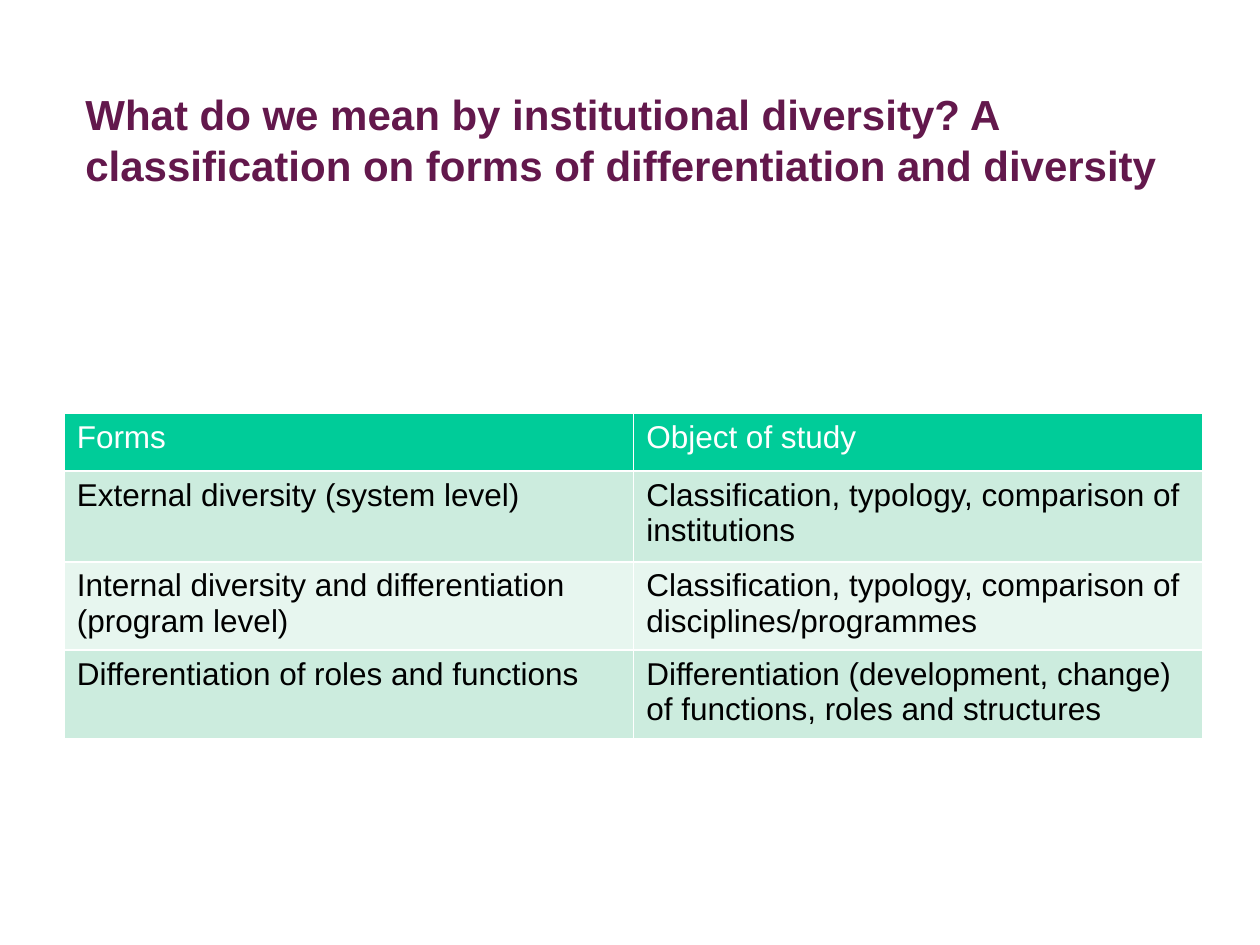
from typing import NamedTuple, Optional

import pptx
import pptx.dml.color
import pptx.enum.text
import pptx.util

Inches = pptx.util.Inches
RGBColor = pptx.dml.color.RGBColor

PLUM = RGBColor(0x63, 0x18, 0x4C)
GREEN = RGBColor(0x00, 0xCC, 0x99)
MINT = RGBColor(0xCC, 0xEC, 0xDE)
PALE_MINT = RGBColor(0xE7, 0xF6, 0xEF)
WHITE = RGBColor(0xFF, 0xFF, 0xFF)
BLACK = RGBColor(0x00, 0x00, 0x00)


class DiversityRow(NamedTuple):
    form: str
    study_object: str
    height: float


HEADING = DiversityRow("Forms", "Object of study", 0.46)
DIVERSITY_FORMS = [
    DiversityRow("External diversity (system level)",
                 "Classification, typology, comparison of institutions", 0.72),
    DiversityRow("Internal diversity and differentiation (program level)",
                 "Classification, typology, comparison of disciplines/programmes", 0.7),
    DiversityRow("Differentiation of roles and functions",
                 "Differentiation (development, change) of functions, roles and structures", 0.7),
]


def write_text(frame, text: str, *, size: float, color: RGBColor,
               bold: Optional[bool] = None) -> None:
    frame.word_wrap = True
    run = frame.paragraphs[0].add_run()
    run.text = text
    run.font.name = "Arial"
    run.font.size = pptx.util.Pt(size)
    run.font.color.rgb = color
    run.font.bold = bold


def add_title(slide, text: str) -> None:
    title = slide.shapes.add_textbox(Inches(0.58), Inches(0.6), Inches(9), Inches(1.01))
    title.text_frame.vertical_anchor = pptx.enum.text.MSO_ANCHOR.MIDDLE
    write_text(title.text_frame, text, size=24, color=PLUM, bold=True)


def fill_row(table, index: int, entry: DiversityRow, fill: RGBColor, color: RGBColor) -> None:
    table.rows[index].height = Inches(entry.height)
    for cell, text in zip(table.rows[index].cells, (entry.form, entry.study_object)):
        cell.fill.solid()
        cell.fill.fore_color.rgb = fill
        write_text(cell.text_frame, text, size=18, color=color)


def add_diversity_table(slide) -> None:
    height = sum(entry.height for entry in [HEADING, *DIVERSITY_FORMS])
    table = slide.shapes.add_table(len(DIVERSITY_FORMS) + 1, 2, Inches(0.51), Inches(3.28),
                                   Inches(9.04), Inches(height)).table
    fill_row(table, 0, HEADING, GREEN, WHITE)
    for index, entry in enumerate(DIVERSITY_FORMS, start=1):
        fill_row(table, index, entry, MINT if index % 2 else PALE_MINT, BLACK)


def main() -> None:
    presentation = pptx.Presentation()
    presentation.slide_width = Inches(10)
    presentation.slide_height = Inches(7.5)
    slide = presentation.slides.add_slide(presentation.slide_layouts[6])
    add_title(slide, "What do we mean by institutional diversity? "
                     "A classification on forms of differentiation and diversity")
    add_diversity_table(slide)
    presentation.save("out.pptx")


if __name__ == "__main__":
    main()
